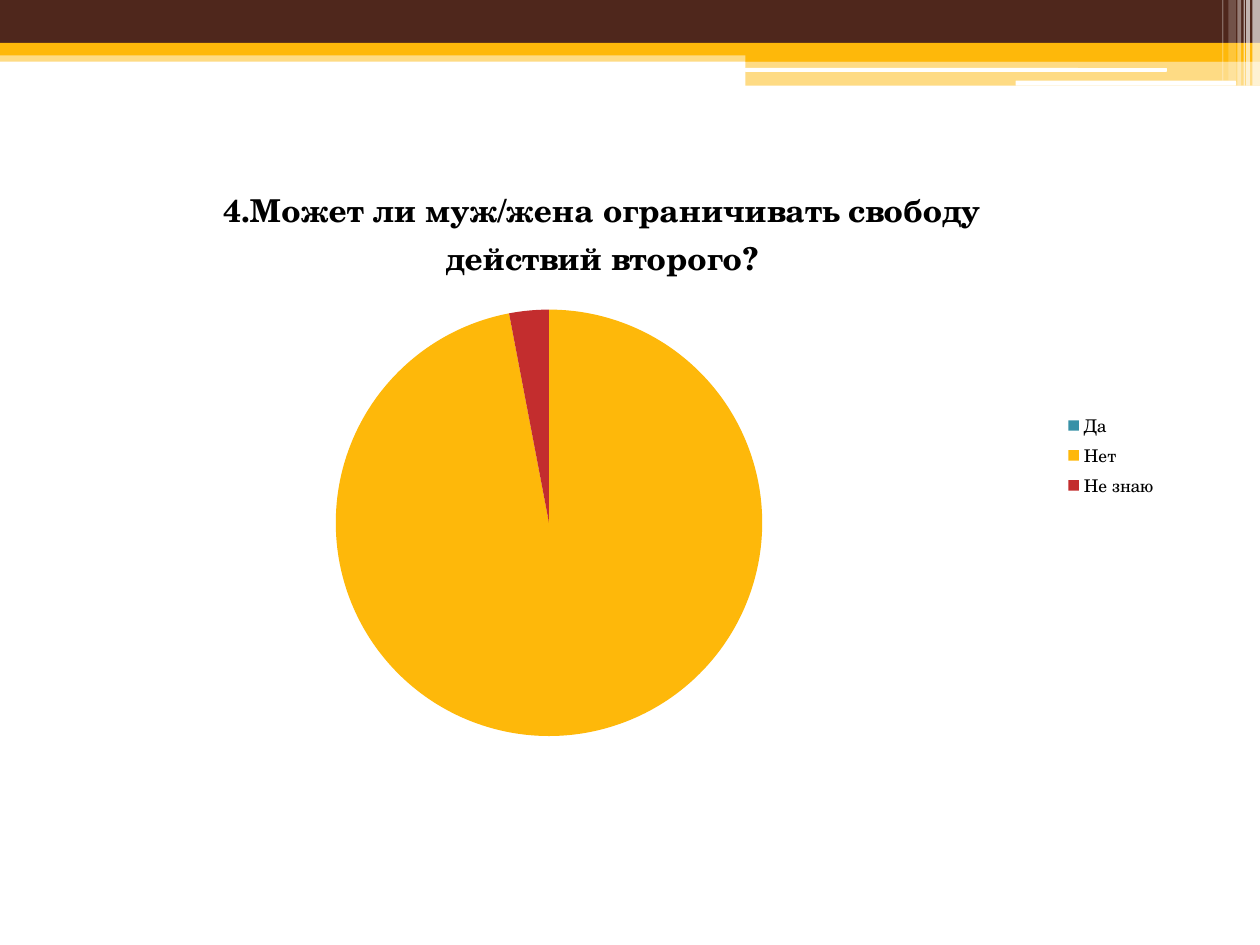
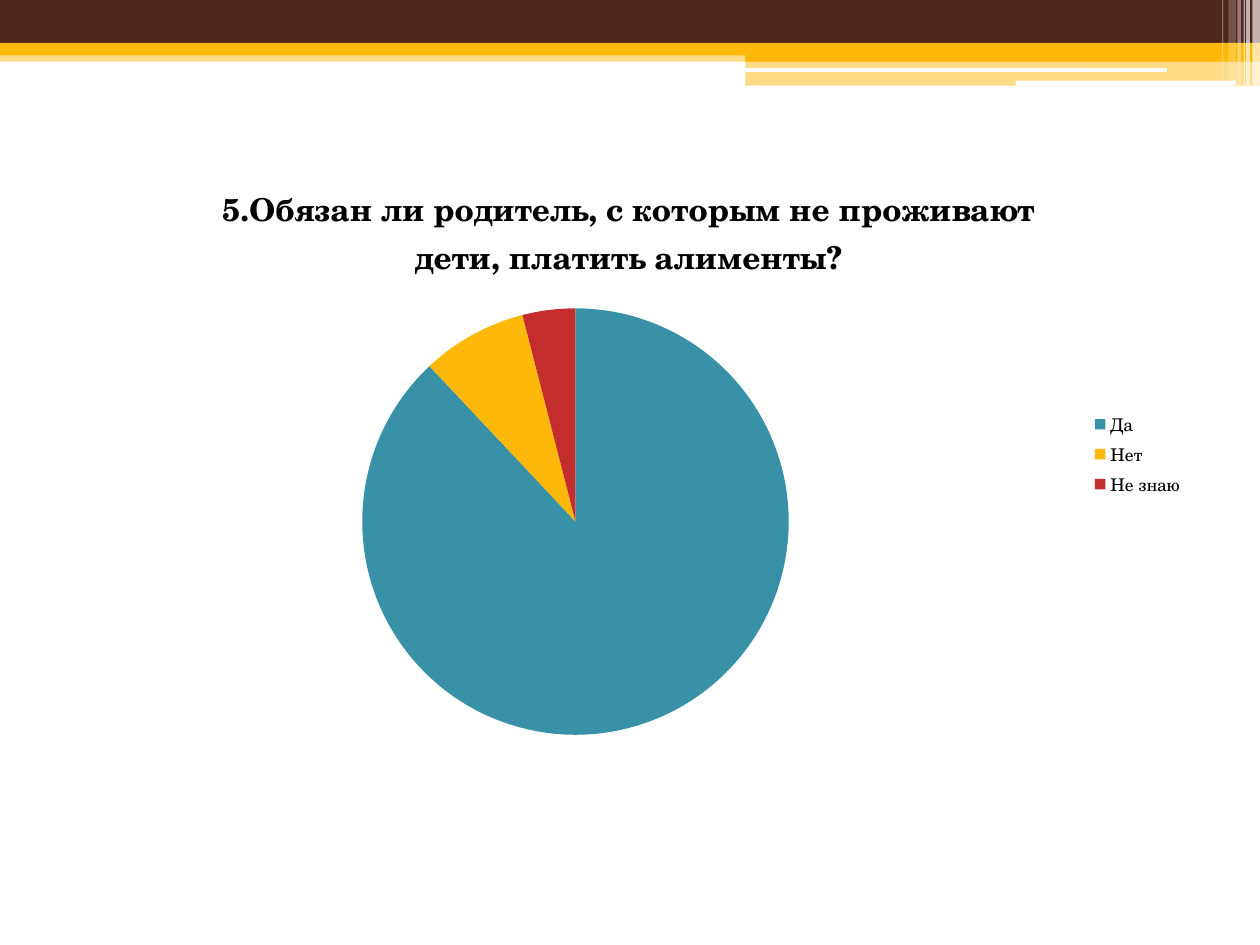
from dataclasses import dataclass

from lxml.etree import SubElement
from pptx import Presentation
from pptx.chart.data import CategoryChartData
from pptx.dml.color import RGBColor
from pptx.enum.chart import XL_CHART_TYPE as ChartType, XL_LEGEND_POSITION as LegendPosition
from pptx.enum.shapes import MSO_SHAPE as Preset
from pptx.oxml.ns import qn
from pptx.util import Pt


@dataclass(frozen=True)
class Theme:
    brown: str = "4F271C"
    amber: str = "FEB80A"
    white: str = "FFFFFF"
    black: str = "000000"
    answer_colours: tuple = ("3891A7", "FEB80A", "C32D2E")
    font: str = "TeX Gyre Schola"
    question_size: int = 18
    legend_size: int = 10


THEME = Theme()
SLIDE_WIDTH, SLIDE_HEIGHT = 720, 540
CHART_WIDTH, CHART_HEIGHT = 648, 340.56

ANSWERS = ("Да", "Нет", "Не знаю")
QUESTIONS = [
    {"question": "4.Может ли муж/жена ограничивать свободу действий второго?",
     "shares": (0, 97, 3), "corner": (20.16, 90)},
    {"question": "5.Обязан ли родитель, с которым не проживают дети, платить алименты?",
     "shares": (88, 8, 4), "corner": (35.28, 89.28)},
]

# left, top, width, height, colour, opacity in percent
BANDS = [
    (0, 28.8, SLIDE_WIDTH, 6.48, THEME.amber, 50),
    (0, 0, SLIDE_WIDTH, 24.48, THEME.brown, 100),
    (0, 24.48, SLIDE_WIDTH, 7.2, THEME.amber, 100),
    (426, 28.08, 294, 7.2, THEME.amber, 100),
    (426, 34.8, 294, 14.16, THEME.amber, 50),
]
# left, top, width, height
ROUNDED_BARS = [(425.6, 38.88, 241.2, 2.16), (580.32, 46.08, 126, 2.88)]
# left, width, height, opacity in percent
STREAKS = [
    (715.68, 4.32, 48.96, 65),
    (712.08, 2.16, 48.96, 65),
    (710.64, 0.72, 48.96, 60),
    (707.04, 2.16, 48.96, 40),
    (702, 4.32, 46.08, 20),
    (698.4, 0.72, 46.08, 30),
]


def paint(fill, colour, opacity=100):
    fill.solid()
    fill.fore_color.rgb = RGBColor.from_string(colour)
    if opacity < 100:
        colour_node = fill._xPr.find(".//" + qn("a:srgbClr"))
        SubElement(colour_node, qn("a:alpha"), val=str(opacity * 1000))


def set_font(font, size, bold):
    for name, value in {"name": THEME.font, "size": Pt(size), "bold": bold}.items():
        setattr(font, name, value)
    font.color.rgb = RGBColor.from_string(THEME.black)


def add_bar(slide, preset, box, colour, opacity=100):
    bar = slide.shapes.add_shape(preset, *map(Pt, box))
    bar.shadow.inherit = False
    bar.line.fill.background()
    paint(bar.fill, colour, opacity)


def add_header(slide):
    for *box, colour, opacity in BANDS:
        add_bar(slide, Preset.RECTANGLE, box, colour, opacity)
    for box in ROUNDED_BARS:
        add_bar(slide, Preset.ROUNDED_RECTANGLE, box, THEME.white)
    for left, width, height, opacity in STREAKS:
        add_bar(slide, Preset.RECTANGLE, (left, 0, width, height), THEME.white, opacity)


def add_answer_pie(slide, question, shares, corner):
    answers = CategoryChartData()
    answers.categories = ANSWERS
    answers.add_series("Series 1", shares)
    box = map(Pt, (*corner, CHART_WIDTH, CHART_HEIGHT))
    chart = slide.shapes.add_chart(ChartType.PIE, *box, answers).chart
    set_font(chart.font, THEME.legend_size, False)

    heading = chart.chart_title.text_frame
    heading.text = question
    set_font(heading.paragraphs[0].runs[0].font, THEME.question_size, True)
    chart.chart_title.include_in_layout = False

    chart.has_legend = True
    chart.legend.position = LegendPosition.RIGHT
    chart.legend.include_in_layout = False

    pie = chart.plots[0]
    pie.vary_by_categories = True
    for index, colour in enumerate(THEME.answer_colours):
        paint(pie.series[0].points[index].format.fill, colour)


def main():
    deck = Presentation()
    deck.slide_width, deck.slide_height = Pt(SLIDE_WIDTH), Pt(SLIDE_HEIGHT)
    blank_layout = deck.slide_layouts[6]
    for survey_item in QUESTIONS:
        slide = deck.slides.add_slide(blank_layout)
        paint(slide.background.fill, THEME.white)
        add_header(slide)
        add_answer_pie(slide, **survey_item)
    deck.save("out.pptx")


if __name__ == "__main__":
    main()
